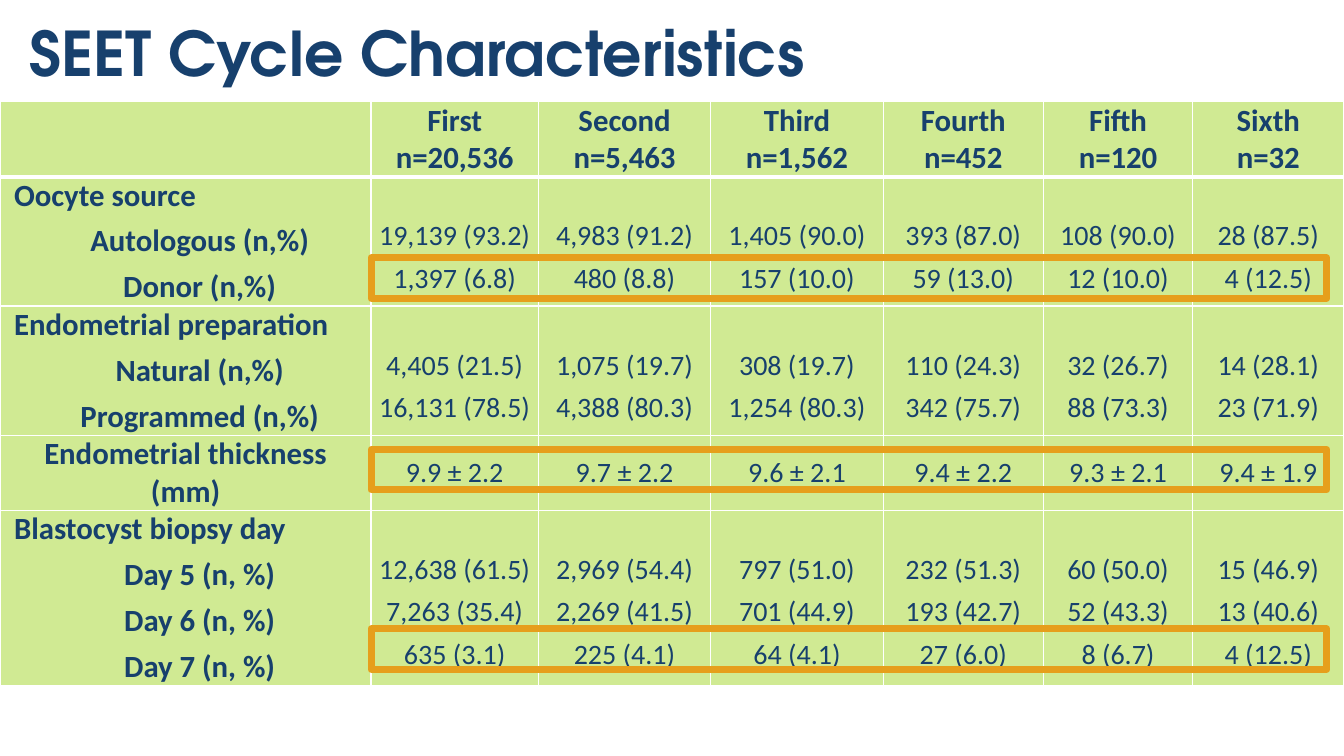
from lxml.etree import SubElement
from pptx import Presentation
from pptx.dml.color import RGBColor
from pptx.enum.shapes import MSO_SHAPE
from pptx.enum.text import MSO_ANCHOR, PP_ALIGN
from pptx.oxml.ns import qn
from pptx.util import Inches, Pt

COLORS = {"navy": "17406D", "green": "D0EA93", "orange": "E69F1C", "white": "FFFFFF"}

COLUMN_WIDTHS = [3.68, 1.66, 1.71, 1.71, 1.59, 1.48, 1.5]
ROW_HEIGHTS = [0.72, 1.17, 1.17, 0.43, 1.61]
HEADER = [[], ["First", "n=20,536"], ["Second", "n=5,463"], ["Third", "n=1,562"],
          ["Fourth", "n=452"], ["Fifth", "n=120"], ["Sixth", "n=32"]]

# Each section: heading (None if the row stands alone), then its lines of label and values
SECTIONS = [
    ("Oocyte source", [
        ["Autologous (n,%)", "19,139 (93.2)", "4,983 (91.2)", "1,405 (90.0)",
         "393 (87.0)", "108 (90.0)", "28 (87.5)"],
        ["Donor (n,%)", "1,397 (6.8)", "480 (8.8)", "157 (10.0)",
         "59 (13.0)", "12 (10.0)", "4 (12.5)"]]),
    ("Endometrial preparation", [
        ["Natural (n,%)", "4,405 (21.5)", "1,075 (19.7)", "308 (19.7)",
         "110 (24.3)", "32 (26.7)", "14 (28.1)"],
        ["Programmed (n,%)", "16,131 (78.5)", "4,388 (80.3)", "1,254 (80.3)",
         "342 (75.7)", "88 (73.3)", "23 (71.9)"]]),
    (None, [
        ["Endometrial thickness (mm)", "9.9 ± 2.2", "9.7 ± 2.2", "9.6 ± 2.1",
         "9.4 ± 2.2", "9.3 ± 2.1", "9.4 ± 1.9"]]),
    ("Blastocyst biopsy day", [
        ["Day 5 (n, %)", "12,638 (61.5)", "2,969 (54.4)", "797 (51.0)",
         "232 (51.3)", "60 (50.0)", "15 (46.9)"],
        ["Day 6 (n, %)", "7,263 (35.4)", "2,269 (41.5)", "701 (44.9)",
         "193 (42.7)", "52 (43.3)", "13 (40.6)"],
        ["Day 7 (n, %)", "635 (3.1)", "225 (4.1)", "64 (4.1)",
         "27 (6.0)", "8 (6.7)", "4 (12.5)"]]),
]


def add_text(tf, lines, size=22, bold=True, font="Calibri", align=PP_ALIGN.CENTER,
             after=0, indent=0, spacing=None):
    """Append one paragraph per line, filling the empty first paragraph if there is one."""
    for line in lines:
        p = tf.paragraphs[0] if not tf.text else tf.add_paragraph()
        p.alignment = align
        p.space_after = Pt(after)
        if spacing:
            p.line_spacing = spacing
        if indent:
            p._p.get_or_add_pPr().set("marL", str(Inches(indent)))
        r = p.add_run()
        r.text = line
        r.font.size = Pt(size)
        r.font.bold = bold
        r.font.name = font
        r.font.color.rgb = RGBColor.from_string(COLORS["navy"])


def style_cell(cell, top=1, bottom=1):
    """Give a cell its margins, white borders (widths in points) and green fill."""
    cell.margin_left = cell.margin_right = Inches(0.07)
    cell.margin_top = cell.margin_bottom = 0
    tcPr = cell._tc.get_or_add_tcPr()
    for side, width in (("L", 1), ("R", 1), ("T", top), ("B", bottom)):
        ln = SubElement(tcPr, qn(f"a:ln{side}"), w=str(Pt(width)))
        SubElement(SubElement(ln, qn("a:solidFill")), qn("a:srgbClr"), val=COLORS["white"])
    cell.fill.solid()
    cell.fill.fore_color.rgb = RGBColor.from_string(COLORS["green"])


prs = Presentation()
prs.slide_width, prs.slide_height = Inches(13.33), Inches(7.5)
s = prs.slides.add_slide(prs.slide_layouts[6])

# Table frame
table = s.shapes.add_table(len(ROW_HEIGHTS), len(COLUMN_WIDTHS), 0, Inches(1.01),
                           Inches(13.33), Inches(sum(ROW_HEIGHTS))).table
table.horz_banding = False
for column, width in zip(table.columns, COLUMN_WIDTHS):
    column.width = Inches(width)
for row, height in zip(table.rows, ROW_HEIGHTS):
    row.height = Inches(height)

# Header row
for col, lines in enumerate(HEADER):
    cell = table.cell(0, col)
    style_cell(cell, bottom=3)
    cell.vertical_anchor = MSO_ANCHOR.MIDDLE
    add_text(cell.text_frame, lines)

# Sections: labels on the left, values start one line below the heading
for row, (heading, lines) in enumerate(SECTIONS, start=1):
    for col, texts in enumerate(zip(*lines)):
        cell = table.cell(row, col)
        tf = cell.text_frame
        style_cell(cell, top=3 if row == 1 else 1)
        cell.vertical_anchor = MSO_ANCHOR.TOP if heading else MSO_ANCHOR.MIDDLE
        if col == 0:
            if heading:
                add_text(tf, [heading], align=PP_ALIGN.LEFT, after=6, indent=0.07)
            add_text(tf, texts, after=6, indent=0.28 if heading else 0)
        else:
            if heading:
                cell.margin_top = Inches(0.42)
            add_text(tf, texts, size=20, bold=False, after=6)

# Title
title = s.shapes.add_textbox(Inches(0.19), Inches(0.2), Inches(12), Inches(0.73))
tf = title.text_frame
tf.word_wrap = True
tf.vertical_anchor = MSO_ANCHOR.MIDDLE
add_text(tf, ["SEET Cycle Characteristics"], size=44, font="TeX Gyre Adventor",
         align=PP_ALIGN.LEFT, spacing=0.9)

# Highlight frames around donor, thickness and day 7 values
for top in (2.56, 4.46, 6.24):
    sp = s.shapes.add_shape(MSO_SHAPE.RECTANGLE, Inches(COLUMN_WIDTHS[0]), Inches(top),
                            Inches(9.48), Inches(0.4))
    sp.shadow.inherit = False
    sp.fill.background()
    sp.line.color.rgb = RGBColor.from_string(COLORS["orange"])
    sp.line.width = Pt(5)

prs.save("out.pptx")
